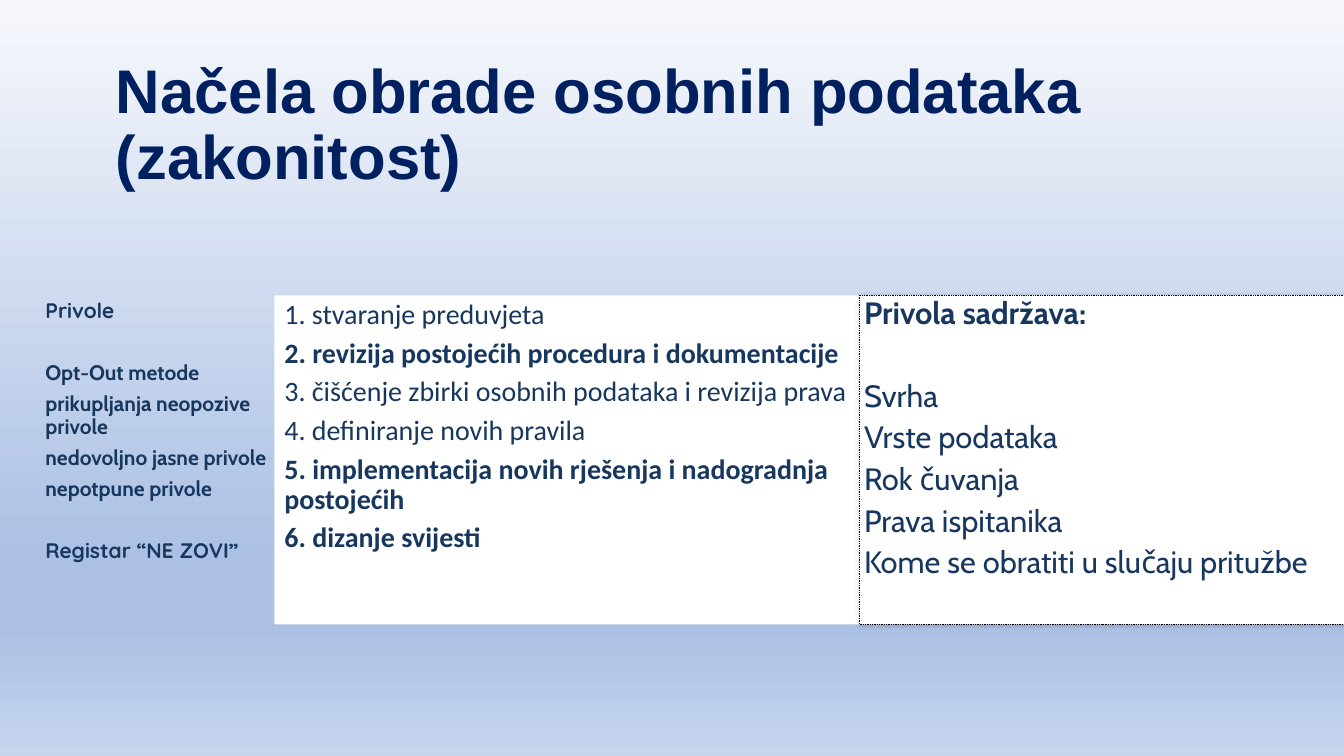
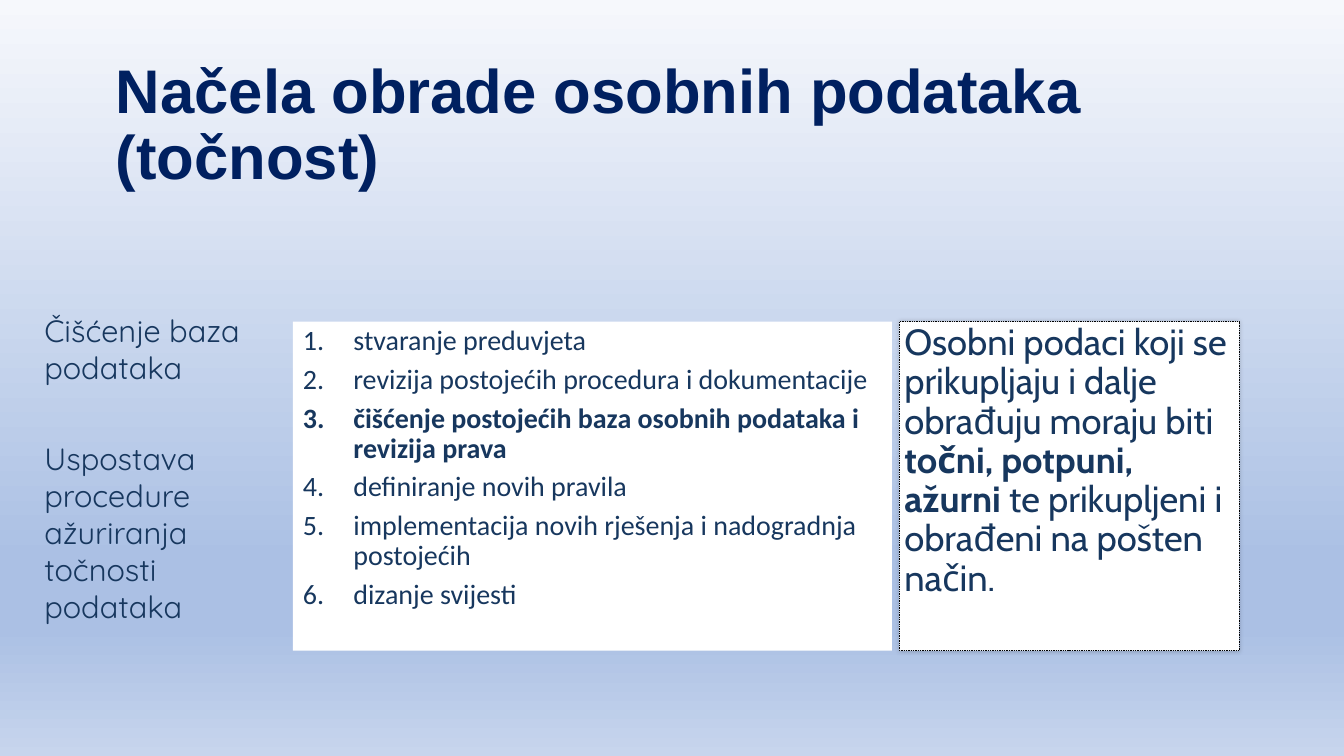
from lxml.etree import SubElement
from pptx import Presentation
from pptx.dml.color import RGBColor
from pptx.enum.dml import MSO_LINE as Dash
from pptx.enum.shapes import MSO_SHAPE as Shape
from pptx.enum.text import MSO_ANCHOR as Anchor, MSO_AUTO_SIZE as AutoSize, PP_ALIGN as Align
from pptx.oxml.ns import qn
from pptx.util import Inches, Pt

NAVY, TEXT, WHITE, BLACK = "002060", "17375E", "FFFFFF", "000000"
GRADIENT = [(0, "F6F8FC"), (74, "ABC0E4"), (83, "ABC0E4"), (100, "C7D5ED")]
TWO_CONTENT = 3
WIDE_INSETS = (0.2, 0.1)
NARROW_INSETS = (0.1, 0.05)
PANEL_HEIGHT = 6.53
BOLD = {"bold": True}


def color(value):
    return RGBColor.from_string(value)


class Builder:
    def __init__(self):
        self.deck = Presentation()
        self.deck.slide_width, self.deck.slide_height = Inches(26.66), Inches(15)
        self.page = None
        self.paint_background()

    def paint_background(self):
        master = self.deck.slide_master
        fill = master.background.fill
        fill.gradient()
        fill.gradient_angle = 270
        stops = next(master.element.iter(qn("a:gsLst")))
        for stop in list(stops):
            stops.remove(stop)
        for percent, value in GRADIENT:
            stop = SubElement(stops, qn("a:gs"), pos=str(percent * 1000))
            SubElement(stop, qn("a:srgbClr"), val=value)

    def add_page(self, title, title_width):
        layout = self.deck.slide_layouts[TWO_CONTENT]
        self.page = self.deck.slides.add_slide(layout)
        box = self.place(self.page.shapes.title, 2.1, 0.95, title_width, 2.98)
        style = {"name": "Arial", "size": 88, "color": NAVY, "bold": True}
        self.set_text(box, [title], style, anchor=Anchor.BOTTOM)

    def place(self, box, left, top, width, height):
        for name, value in zip(("left", "top", "width", "height"), (left, top, width, height)):
            setattr(box, name, Inches(value))
        return box

    def aside(self, bounds, paragraphs, style, line_spacing=0.9):
        box = self.place(self.page.placeholders[1], *bounds)
        self.set_text(box, paragraphs, style, line_spacing=line_spacing)

    def steps(self, left, top, width, paragraphs, numbered=False):
        box = self.place(self.page.placeholders[2], left, top, width, PANEL_HEIGHT)
        box.fill.solid()
        box.fill.fore_color.rgb = color(WHITE)
        self.set_text(box, paragraphs, {"name": "Calibri", "size": 40}, numbered=numbered)

    def panel(self, left, top, width, paragraphs, size):
        bounds = [Inches(value) for value in (left, top, width, PANEL_HEIGHT)]
        box = self.page.shapes.add_shape(Shape.RECTANGLE, *bounds)
        box.fill.solid()
        box.fill.fore_color.rgb = color(WHITE)
        box.line.color.rgb = color(BLACK)
        box.line.width = Pt(1.25)
        box.line.dash_style = Dash.ROUND_DOT
        box.shadow.inherit = False
        effects = next(box.element.iter(qn("a:effectLst")))
        shadow = SubElement(effects, qn("a:outerShdw"), blurRad=str(Pt(6)), dist="0",
                            dir=str(315 * 60000), rotWithShape="0")
        tint = SubElement(shadow, qn("a:srgbClr"), val=BLACK)
        SubElement(tint, qn("a:alpha"), val="20000")
        self.set_text(box, paragraphs, {"name": "Cabin", "size": size}, insets=NARROW_INSETS)

    def set_text(self, box, paragraphs, style, insets=WIDE_INSETS, anchor=Anchor.TOP,
                 line_spacing=0.9, numbered=False):
        frame = box.text_frame
        side, edge = (Inches(value) for value in insets)
        settings = {"word_wrap": True, "auto_size": AutoSize.NONE, "vertical_anchor": anchor,
                    "margin_left": side, "margin_right": side,
                    "margin_top": edge, "margin_bottom": edge}
        for name, value in settings.items():
            setattr(frame, name, value)
        for index, content in enumerate(paragraphs):
            para = frame.add_paragraph() if index else frame.paragraphs[0]
            self.set_bullet(para, numbered)
            spans = content if isinstance(content, list) else [content]
            gap = 0
            for item in spans:
                text, changes = item if isinstance(item, tuple) else (item, {})
                gap = changes.get("gap", gap)
                self.add_span(para, text, {**style, **changes})
            spacing = {"alignment": Align.LEFT, "line_spacing": line_spacing,
                       "space_before": Pt(gap), "space_after": Pt(12)}
            for name, value in spacing.items():
                setattr(para, name, value)

    def set_bullet(self, para, numbered):
        properties = para._p.get_or_add_pPr()
        indent = Inches(1) if numbered else 0
        properties.set("marL", str(indent))
        properties.set("indent", str(-indent))
        if numbered:
            SubElement(properties, qn("a:buFont"), typeface="+mj-lt")
            SubElement(properties, qn("a:buAutoNum"), type="arabicPeriod")
        else:
            SubElement(properties, qn("a:buNone"))

    def add_span(self, para, text, style):
        span = para.add_run()
        span.text = text
        values = {"name": style["name"], "size": Pt(style["size"]),
                  "bold": style.get("bold", False)}
        for name, value in values.items():
            setattr(span.font, name, value)
        span.font.color.rgb = color(style.get("color", TEXT))


def build_lawfulness(builder):
    builder.add_page("Načela obrade osobnih podataka (zakonitost)", 24.04)
    top = 5.86
    builder.aside((0.7, top, 5.57, PANEL_HEIGHT), [
        ("Privole", {"name": "Quicksand"}),
        ("Opt-Out metode", {"gap": 44}),
        "prikupljanja neopozive privole",
        "nedovoljno jasne privole",
        "nepotpune privole",
        ("Registar “NE ZOVI”", {"name": "Quicksand", "gap": 44}),
    ], {"name": "Cabin", "size": 30, "bold": True})
    builder.steps(5.44, top, 11.66, [
        "1. stvaranje preduvjeta",
        ("2. revizija postojećih procedura i dokumentacije", BOLD),
        "3. čišćenje zbirki osobnih podataka i revizija prava",
        "4. definiranje novih pravila",
        ("5. implementacija novih rješenja i nadogradnja postojećih", BOLD),
        ("6. dizanje svijesti", BOLD),
    ])
    builder.panel(17.04, top, 9.62, [
        ("Privola sadržava:", BOLD),
        ("Svrha", {"gap": 59}),
        "Vrste podataka",
        "Rok čuvanja",
        "Prava ispitanika",
        "Kome se obratiti u slučaju pritužbe",
    ], 44)


def build_accuracy(builder):
    builder.add_page("Načela obrade osobnih podataka (točnost)", 22.48)
    top = 6.38
    builder.aside((0.68, 6.09, 4.67, 6.81), [
        "Čišćenje baza podataka",
        ("Uspostava procedure ažuriranja točnosti podataka", {"gap": 65}),
    ], {"name": "Quicksand", "size": 44}, line_spacing=1.0)
    builder.steps(5.81, top, 11.88, [
        "stvaranje preduvjeta",
        "revizija postojećih procedura i dokumentacije",
        ("čišćenje postojećih baza osobnih podataka i revizija prava", BOLD),
        "definiranje novih pravila",
        "implementacija novih rješenja i nadogradnja postojećih",
        "dizanje svijesti",
    ], numbered=True)
    builder.panel(17.84, top, 6.74, [[
        "Osobni podaci koji se prikupljaju i dalje obrađuju moraju biti ",
        ("točni, potpuni, ažurni ", BOLD),
        "te prikupljeni i obrađeni na pošten način.",
    ]], 52)


def main():
    builder = Builder()
    build_lawfulness(builder)
    build_accuracy(builder)
    builder.deck.save("out.pptx")


if __name__ == "__main__":
    main()
